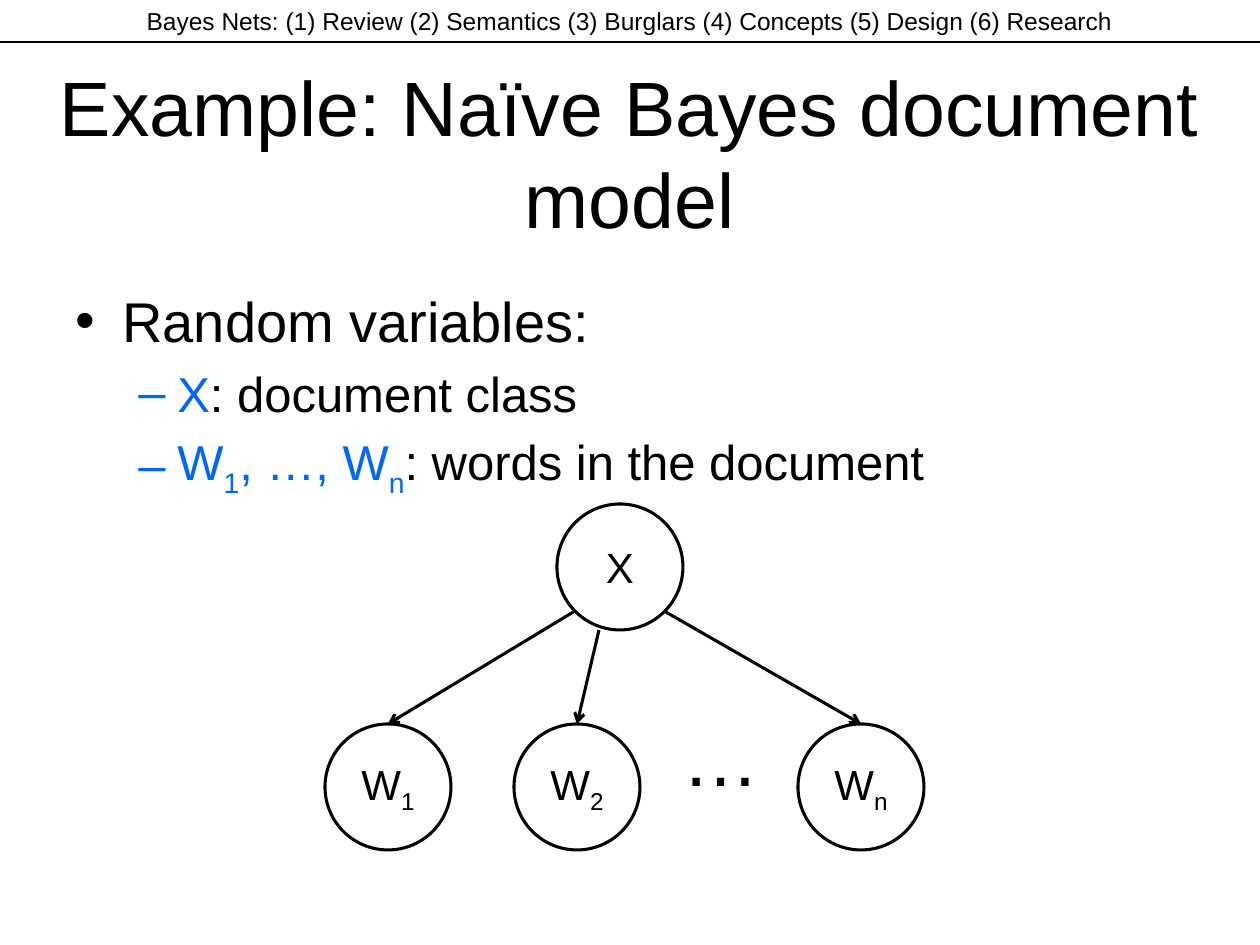
from dataclasses import dataclass

from lxml.etree import SubElement
from pptx import Presentation
from pptx.dml.color import RGBColor
from pptx.enum.shapes import MSO_CONNECTOR, MSO_SHAPE
from pptx.enum.text import MSO_ANCHOR, MSO_AUTO_SIZE, PP_ALIGN
from pptx.oxml.ns import qn
from pptx.shapes.autoshape import Shape
from pptx.shapes.connector import Connector
from pptx.slide import Slide
from pptx.text.text import _Paragraph as Paragraph
from pptx.util import Emu, Pt


@dataclass(frozen=True)
class Theme:
    font: str = "Arial"
    ink: RGBColor = RGBColor(0, 0, 0)
    accent: RGBColor = RGBColor(0x00, 0x66, 0xFF)
    header_size: int = 14
    title_size: int = 44
    body_size: int = 32
    detail_size: int = 28
    node_size: int = 24
    rule_width: float = 0.75
    diagram_width: float = 1.75


@dataclass(frozen=True)
class Piece:
    text: str
    color: RGBColor
    subscript: bool = False


@dataclass(frozen=True)
class Bullet:
    pieces: tuple[Piece, ...]
    level: int
    mark: str
    size: int
    left: int
    hanging: int


@dataclass(frozen=True)
class Node:
    left: int
    top: int
    letter: str
    index: str = ""


@dataclass(frozen=True)
class Word:
    node: Node
    arrow_start: tuple[int, int]


THEME = Theme()
NODE_DIAMETER = 126
DOCUMENT_CLASS = Node(557, 504, "X")
WORDS = (
    Word(Node(325, 724, "W", "1"), (575, 611)),
    Word(Node(514, 724, "W", "2"), (599, 630)),
    Word(Node(798, 724, "W", "n"), (664, 611)),
)
BULLETS = (
    Bullet((Piece("Random variables:", THEME.ink),), 0, "•", THEME.body_size, 47, 47),
    Bullet(
        (Piece("X", THEME.accent), Piece(": document class", THEME.ink)),
        1, "–", THEME.detail_size, 102, 39,
    ),
    Bullet(
        (
            Piece("W", THEME.accent),
            Piece("1", THEME.accent, True),
            Piece(", …, W", THEME.accent),
            Piece("n", THEME.accent, True),
            Piece(": words in the document", THEME.ink),
        ),
        1, "–", THEME.detail_size, 102, 39,
    ),
)


def px(value: int) -> Emu:
    """Convert slide pixels to EMU."""
    return Emu(round(value * 914400 / 126))


def write_pieces(paragraph: Paragraph, pieces: tuple[Piece, ...], size: int) -> None:
    """Write formatted runs into a paragraph."""
    for piece in pieces:
        run = paragraph.add_run()
        run.text = piece.text
        run.font.name = THEME.font
        run.font.size = Pt(size)
        run.font.color.rgb = piece.color
        if piece.subscript:
            run.font._element.set("baseline", "-25000")


def add_text(slide: Slide, box: tuple[int, int, int, int], text: str, size: int,
             alignment: PP_ALIGN) -> None:
    """Add a one-paragraph text box."""
    shape = slide.shapes.add_textbox(*map(px, box))
    shape.text_frame.word_wrap = True
    paragraph = shape.text_frame.paragraphs[0]
    paragraph.alignment = alignment
    write_pieces(paragraph, (Piece(text, THEME.ink),), size)


def set_title(slide: Slide, text: str) -> None:
    """Place and format the title placeholder."""
    title = slide.shapes.title
    title.left, title.top, title.width, title.height = map(px, (10, 73, 1239, 158))
    frame = title.text_frame
    frame.text = text
    frame.word_wrap = True
    frame.auto_size = MSO_AUTO_SIZE.NONE
    frame.vertical_anchor = MSO_ANCHOR.MIDDLE
    paragraph = frame.paragraphs[0]
    paragraph.alignment = PP_ALIGN.CENTER
    font = paragraph.runs[0].font
    font.name, font.size, font.color.rgb = THEME.font, Pt(THEME.title_size), THEME.ink


def add_bullets(slide: Slide, bullets: tuple[Bullet, ...]) -> None:
    """Add the bulleted list of variables."""
    frame = slide.shapes.add_textbox(*map(px, (63, 280, 1134, 624))).text_frame
    frame.word_wrap = True
    for position, bullet in enumerate(bullets):
        paragraph = frame.add_paragraph() if position else frame.paragraphs[0]
        paragraph.level = bullet.level
        properties = paragraph._p.get_or_add_pPr()
        properties.set("marL", str(px(bullet.left)))
        properties.set("indent", str(-px(bullet.hanging)))
        spacing = SubElement(properties, qn("a:spcBef"))
        SubElement(spacing, qn("a:spcPct"), val="20000")
        SubElement(properties, qn("a:buFont"), typeface=THEME.font)
        SubElement(properties, qn("a:buChar"), char=bullet.mark)
        write_pieces(paragraph, bullet.pieces, bullet.size)


def add_node(slide: Slide, node: Node) -> Shape:
    """Add a labelled circle of the network."""
    box = (node.left, node.top, NODE_DIAMETER, NODE_DIAMETER)
    shape = slide.shapes.add_shape(MSO_SHAPE.OVAL, *map(px, box))
    shape.shadow.inherit = False
    shape.fill.background()
    shape.line.color.rgb = THEME.ink
    shape.line.width = Pt(THEME.diagram_width)
    shape.text_frame.vertical_anchor = MSO_ANCHOR.MIDDLE
    paragraph = shape.text_frame.paragraphs[0]
    paragraph.alignment = PP_ALIGN.CENTER
    pieces = [Piece(node.letter, THEME.ink)]
    if node.index:
        pieces.append(Piece(node.index, THEME.ink, True))
    write_pieces(paragraph, tuple(pieces), THEME.node_size)
    return shape


def add_line(slide: Slide, start: tuple[int, int], end: tuple[int, int],
             width: float) -> Connector:
    """Add a plain straight line."""
    line = slide.shapes.add_connector(MSO_CONNECTOR.STRAIGHT, *map(px, start + end))
    line.line.color.rgb = THEME.ink
    line.line.width = Pt(width)
    SubElement(line._element.spPr, qn("a:effectLst"))
    return line


def add_arrow(slide: Slide, word: Word, target: Shape) -> None:
    """Add an arrow to the top of a word node."""
    end = (word.node.left + NODE_DIAMETER // 2, word.node.top)
    arrow = add_line(slide, word.arrow_start, end, THEME.diagram_width)
    arrow.end_connect(target, 0)
    SubElement(arrow.line._get_or_add_ln(), qn("a:tailEnd"), type="arrow")


def main() -> None:
    """Build and save the slide."""
    presentation = Presentation()
    presentation.slide_width, presentation.slide_height = px(1260), px(945)
    slide = presentation.slides.add_slide(presentation.slide_layouts[5])
    add_text(
        slide, (63, 0, 1134, 53),
        "Bayes Nets: (1) Review (2) Semantics (3) Burglars (4) Concepts (5) Design (6) Research",
        THEME.header_size, PP_ALIGN.CENTER,
    )
    add_line(slide, (0, 42), (1260, 42), THEME.rule_width)
    set_title(slide, "Example: Naïve Bayes document model")
    add_bullets(slide, BULLETS)
    targets = [add_node(slide, word.node) for word in WORDS]
    add_text(slide, (670, 703, 176, 106), "…", THEME.title_size, PP_ALIGN.LEFT)
    add_node(slide, DOCUMENT_CLASS)
    for word, target in zip(WORDS, targets):
        add_arrow(slide, word, target)
    presentation.save("out.pptx")


if __name__ == "__main__":
    main()
